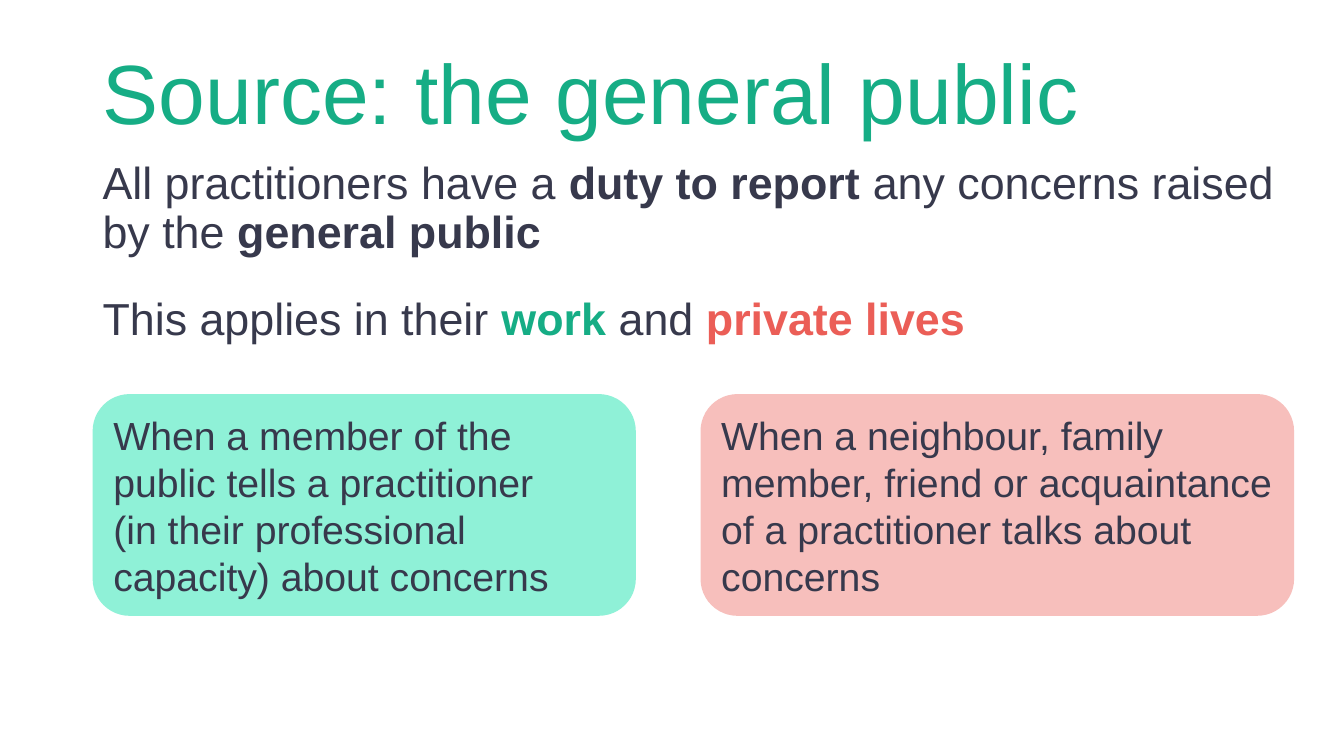
from dataclasses import dataclass

from pptx import Presentation
from pptx.dml.color import RGBColor
from pptx.enum import shapes, text
from pptx.util import Pt

TITLE = "Source: the general public"
STATEMENTS = [
    [
        ("All practitioners have a ", None),
        ("duty to report ", "ink"),
        ("any concerns raised by the ", None),
        ("general public", "ink"),
    ],
    [
        ("This applies in their ", None),
        ("work ", "work"),
        ("and ", None),
        ("private lives", "private"),
    ],
]
SETTINGS = [
    ("When a member of the public tells a practitioner \v"
     "(in their professional capacity) about concerns", "work_fill", 388),
    ("When a neighbour, family member, friend or acquaintance "
     "of a practitioner talks about concerns", "private_fill", 424),
]


@dataclass(frozen=True)
class Theme:
    face: str = "Arial"
    ink: str = "37394C"
    work: str = "16AD85"
    private: str = "EB5E57"
    work_fill: str = "8FF1D7"
    private_fill: str = "F7BFBC"
    title_size: int = 60
    body_size: int = 32
    card_size: int = 28

    def color(self, name):
        return RGBColor.from_string(getattr(self, name))


THEME = Theme()
LEFT, WIDTH = 66.2, 858.2
CARD_TOP, CARD_HEIGHT = 281.5, 158.4


def style(paragraph, size, color):
    paragraph.alignment = text.PP_ALIGN.LEFT
    paragraph.font.name = THEME.face
    paragraph.font.size = Pt(size)
    paragraph.font.color.rgb = THEME.color(color)


def add_title(page):
    title = page.shapes.title
    title.left, title.top = Pt(LEFT), Pt(1.4)
    title.width, title.height = Pt(828), Pt(104.4)
    frame = title.text_frame
    frame.text = TITLE
    frame.word_wrap = True
    frame.auto_size = text.MSO_AUTO_SIZE.NONE
    frame.vertical_anchor = text.MSO_ANCHOR.BOTTOM
    frame.paragraphs[0].line_spacing = 0.9
    style(frame.paragraphs[0], THEME.title_size, "work")


def add_statements(page):
    box = page.shapes.add_textbox(Pt(LEFT), Pt(111.6), Pt(WIDTH), Pt(158.4))
    frame = box.text_frame
    frame.word_wrap = True
    for index, spans in enumerate(STATEMENTS):
        paragraph = frame.add_paragraph() if index else frame.paragraphs[0]
        paragraph.line_spacing = 0.9
        if index:
            paragraph.space_before = Pt(28)
        style(paragraph, THEME.body_size, "ink")
        for words, emphasis in spans:
            span = paragraph.add_run()
            span.text = words
            if emphasis:
                span.font.bold = True
                span.font.color.rgb = THEME.color(emphasis)


def add_cards(page):
    gap = WIDTH - sum(width for _, _, width in SETTINGS)
    left = LEFT
    for words, fill, width in SETTINGS:
        card = page.shapes.add_shape(
            shapes.MSO_SHAPE.ROUNDED_RECTANGLE,
            Pt(left), Pt(CARD_TOP), Pt(width), Pt(CARD_HEIGHT))
        card.shadow.inherit = False
        card.fill.solid()
        card.fill.fore_color.rgb = THEME.color(fill)
        card.line.fill.background()
        frame = card.text_frame
        frame.word_wrap = True
        frame.vertical_anchor = text.MSO_ANCHOR.MIDDLE
        frame.paragraphs[0].text = words
        style(frame.paragraphs[0], THEME.card_size, "ink")
        left += width + gap


def main():
    deck = Presentation()
    deck.slide_width, deck.slide_height = Pt(960), Pt(540)
    page = deck.slides.add_slide(deck.slide_layouts[5])
    add_title(page)
    add_statements(page)
    add_cards(page)
    deck.save("out.pptx")


if __name__ == "__main__":
    main()
